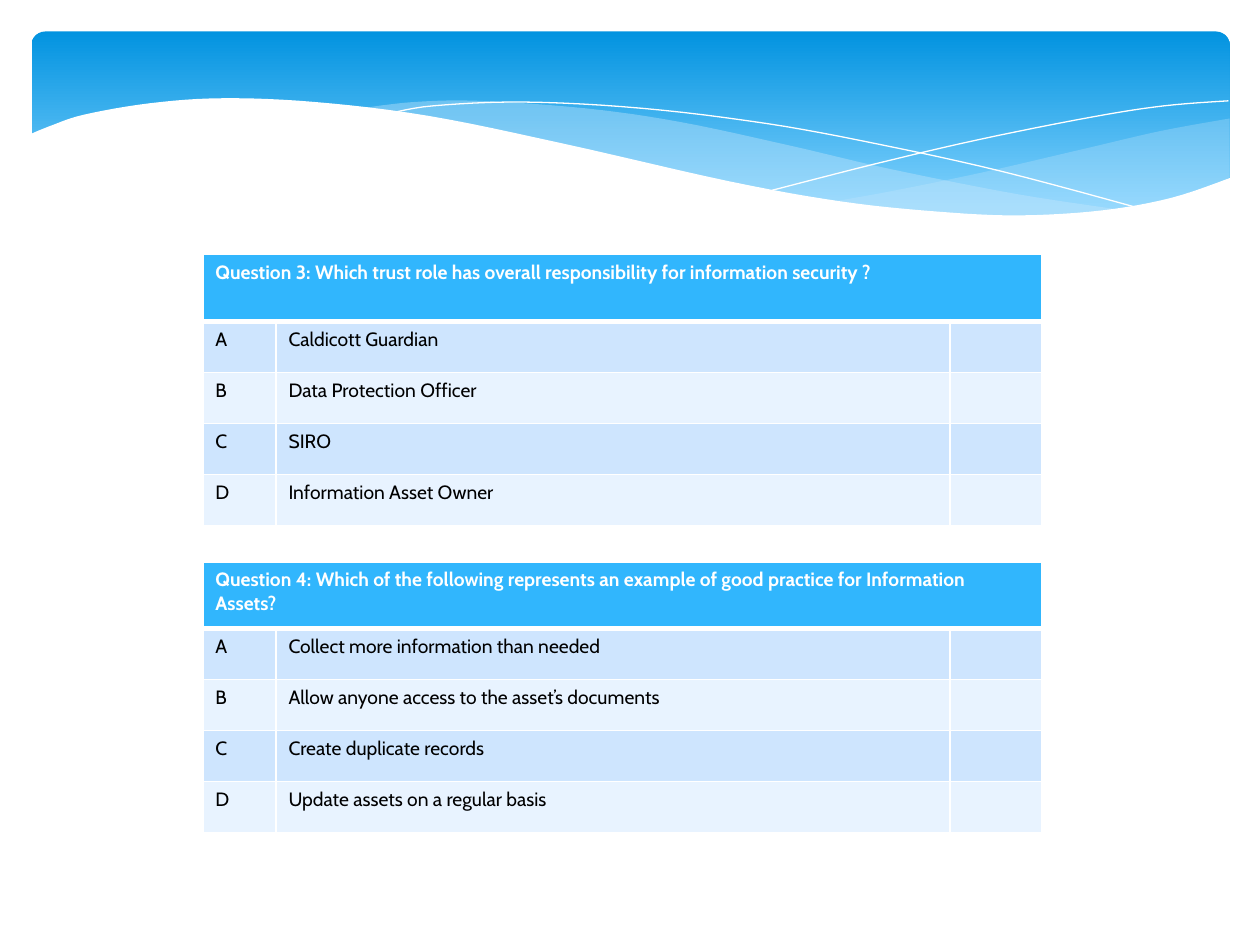
from lxml.etree import SubElement
from pptx import Presentation
from pptx.dml.color import RGBColor
from pptx.enum.shapes import MSO_SHAPE
from pptx.oxml.ns import qn
from pptx.util import Inches, Pt

COLORS = {
    "sky": "0293E0", "pale_sky": "83D3FE", "wave": "C6E7FC", "white": "FFFFFF",
    "header": "31B6FD", "odd": "CEE5FE", "even": "E8F3FF", "text": "000000",
}
QUESTIONS = [
    ("Question 3: Which trust role has overall responsibility for information security ?",
     ["Caldicott Guardian", "Data Protection Officer", "SIRO", "Information Asset Owner"]),
    ("Question 4: Which of the following represents an example of good practice for "
     "Information Assets?",
     ["Collect more information than needed", "Allow anyone access to the asset’s documents",
      "Create duplicate records", "Update assets on a regular basis"]),
]

# Each wave edge lists the points its smooth curve passes through, in inches.
RIGHT_WAVE_TOP = [(9.76, 0.94), (9.21, 1.04), (8.61, 1.18), (7.79, 1.37), (7.06, 1.52), (6.61, 1.6)]
RIGHT_WAVE_BOTTOM = [(6.61, 1.6), (7.19, 1.67), (7.81, 1.72), (8.35, 1.72), (8.81, 1.67),
                     (9.28, 1.58), (9.76, 1.41)]
LEFT_WAVE_TOP = [(8.93, 1.67), (8.07, 1.54), (7.06, 1.34), (6.29, 1.16), (5.41, 0.97),
                 (4.65, 0.86), (3.8, 0.8), (3.28, 0.81), (2.86, 0.86)]
LEFT_WAVE_BOTTOM = [(2.86, 0.86), (3.62, 0.97), (4.49, 1.16), (5.66, 1.43), (6.5, 1.58),
                    (7.22, 1.68), (8.07, 1.73), (8.57, 1.71), (8.93, 1.67)]
FALLING_LINE = [(3.09, 0.9), (3.44, 0.84), (4.16, 0.81), (5.1, 0.86), (6.08, 0.98),
                (6.95, 1.14), (7.95, 1.36), (9.07, 1.66)]
RISING_LINE = [(6.13, 1.51), (6.95, 1.3), (7.76, 1.11), (8.66, 0.93), (9.24, 0.84), (9.75, 0.8)]
PAGE_EDGE = [(9.77, 1.41), (9.3, 1.57), (8.75, 1.67), (8.09, 1.71), (7.44, 1.68), (6.68, 1.6),
             (5.79, 1.44), (4.47, 1.14), (3.4, 0.92), (2.5, 0.81), (1.77, 0.78), (1.19, 0.82),
             (0.67, 0.91), (0.4, 1), (0.23, 1.07)]
PAGE_CORNERS = [(0.23, 2.24), (9.77, 2.24)]


def rgb(name):
    return RGBColor.from_string(COLORS[name])


def smooth(knots, steps=6):
    """Return points along a Catmull-Rom curve through the knots."""
    padded = [knots[0], *knots, knots[-1]]
    points = []
    for a, b, c, d in zip(padded, padded[1:], padded[2:], padded[3:]):
        for i in range(steps):
            t = i / steps
            points.append(tuple(
                (2 * q + (r - p) * t + (2 * p - 5 * q + 4 * r - s) * t ** 2
                 + (3 * q - p - 3 * r + s) * t ** 3) / 2
                for p, q, r, s in zip(a, b, c, d)))
    return points + [knots[-1]]


def add_outline(shapes, points, fill=None, alpha=100):
    """Draw a filled area, or a white hairline when there is no fill."""
    points = [(Inches(x), Inches(y)) for x, y in points]
    builder = shapes.build_freeform(*points[0])
    builder.add_line_segments(points[1:], close=fill is not None)
    sp = builder.convert_to_shape()
    sp.shadow.inherit = False
    if fill is None:
        sp.fill.background()
        sp.line.color.rgb = rgb("white")
        sp.line.width = Pt(0)
        return
    sp.line.fill.background()
    sp.fill.solid()
    sp.fill.fore_color.rgb = rgb(fill)
    if alpha < 100:
        color = sp.fill._xPr.find(".//" + qn("a:srgbClr"))
        SubElement(color, qn("a:alpha"), val=str(alpha * 1000))


def add_wave_banner(shapes, left, top, width, height):
    banner = shapes.add_shape(MSO_SHAPE.ROUNDED_RECTANGLE, left, top, width, height)
    banner.shadow.inherit = False
    banner.adjustments[0] = 0.07
    banner.line.fill.background()
    banner.fill.gradient()
    banner.fill.gradient_angle = 270
    for stop, position, color in zip(banner.fill.gradient_stops, (0, 0.9), ("sky", "pale_sky")):
        stop.position = position
        stop.color.rgb = rgb(color)
    add_outline(shapes, smooth(RIGHT_WAVE_TOP) + smooth(RIGHT_WAVE_BOTTOM), "wave", 29)
    add_outline(shapes, smooth(LEFT_WAVE_TOP) + smooth(LEFT_WAVE_BOTTOM), "wave", 40)
    add_outline(shapes, smooth(FALLING_LINE))
    add_outline(shapes, smooth(RISING_LINE))
    add_outline(shapes, smooth(PAGE_EDGE) + PAGE_CORNERS, "white")


def set_borders(cell, **widths):
    """Give the cell white borders, 1 pt wide unless a side is named."""
    tc_pr = cell._tc.get_or_add_tcPr()
    for side in "LRTB":
        ln = SubElement(tc_pr, qn(f"a:ln{side}"), w=str(Pt(widths.get(side, 1))))
        fill = SubElement(ln, qn("a:solidFill"))
        SubElement(fill, qn("a:srgbClr"), val=COLORS["white"])


def fill_cell(cell, text, fill, color, bold):
    cell.fill.solid()
    cell.fill.fore_color.rgb = rgb(fill)
    if not text:
        cell.margin_top = cell.margin_bottom = 0
        return
    r = cell.text_frame.paragraphs[0].add_run()
    r.text = text
    for name, value in {"name": "Cabin", "size": Pt(11), "bold": bold}.items():
        setattr(r.font, name, value)
    r.font.color.rgb = rgb(color)


def add_question(shapes, question, answers, left, top, width, height):
    rows = [(question, "", "")] + [(letter, answer, "") for letter, answer in zip("ABCD", answers)]
    table = shapes.add_table(len(rows), 3, left, top, width, height).table
    letter_width, mark_width, header_height = Inches(0.58), Inches(0.73), Inches(0.53)
    widths = (letter_width, width - letter_width - mark_width, mark_width)
    for column, column_width in zip(table.columns, widths):
        column.width = column_width
    for i, texts in enumerate(rows):
        is_header = i == 0
        table.rows[i].height = header_height if is_header else (height - header_height) // len(answers)
        fill = "header" if is_header else "odd" if i % 2 else "even"
        for j, text in enumerate(texts):
            cell = table.cell(i, j)
            set_borders(cell, **({"B": 3} if is_header else {"T": 3} if i == 1 else {}))
            fill_cell(cell, text, fill, "white" if is_header else "text", is_header)
    table.cell(0, 0).merge(table.cell(0, 2))


def main():
    prs = Presentation()
    prs.slide_width, prs.slide_height = Inches(10), Inches(7.5)
    shapes = prs.slides.add_slide(prs.slide_layouts[6]).shapes
    add_wave_banner(shapes, Inches(0.25), Inches(0.25), Inches(9.51), Inches(1.56))
    for i, (question, answers) in enumerate(QUESTIONS):
        add_question(shapes, question, answers,
                     Inches(1.61), Inches(2.02 + 2.44 * i), Inches(6.66), Inches(2.15))
    prs.save("out.pptx")


if __name__ == "__main__":
    main()
